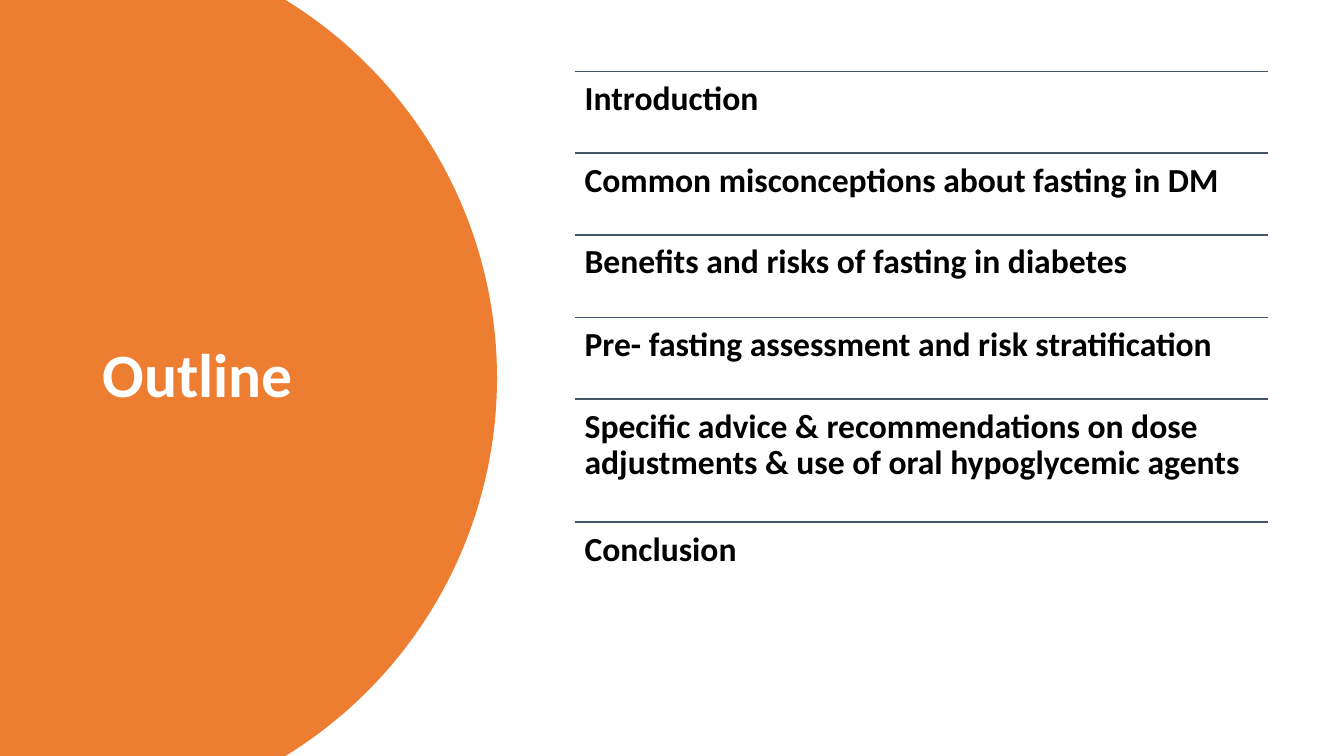
import math

from pptx import Presentation
from pptx.dml.color import RGBColor
from pptx.enum.shapes import MSO_CONNECTOR
from pptx.enum.text import MSO_ANCHOR
from pptx.oxml.ns import qn
from pptx.util import Pt
from lxml import etree

PX = 9144  # EMU in one px, 100 px to the inch
WIDTH, HEIGHT = 1333, 750
ORANGE = RGBColor(0xED, 0x7D, 0x31)
SLATE = RGBColor(0x44, 0x54, 0x6A)
BLACK = RGBColor(0, 0, 0)
WHITE = RGBColor(0xFF, 0xFF, 0xFF)
STRAIGHT = MSO_CONNECTOR.STRAIGHT
TOP, MIDDLE = MSO_ANCHOR.TOP, MSO_ANCHOR.MIDDLE

LIST_LEFT, LIST_TOP, LIST_WIDTH = 570, 71, 688
TOPICS = [  # text and row height
    ("Introduction", 81),
    ("Common misconceptions about fasting in DM", 81),
    ("Benefits and risks of fasting in diabetes", 82),
    ("Pre- fasting assessment and risk stratification", 81),
    ("Specific advice & recommendations on dose adjustments "
     "& use of oral hypoglycemic agents", 122),
    ("Conclusion", 76),
]


class Deck:
    """Holds the style and the current slide; lengths are px."""
    font = "Calibri"

    def __init__(self):
        self.prs = Presentation()
        self.prs.slide_width = WIDTH * PX
        self.prs.slide_height = HEIGHT * PX
        self.s = self.prs.slides.add_slide(self.prs.slide_layouts[6])

    def round_panel(self, center_x, radius, color, steps=90):
        """Fill from the left edge to a circle arc as tall as the slide."""
        half = math.asin(HEIGHT / 2 / radius)
        angles = [half * (2 * i / steps - 1) for i in range(steps + 1)]
        arc = [((center_x + radius * math.cos(a)) * PX,
                (HEIGHT / 2 + radius * math.sin(a)) * PX) for a in angles]
        builder = self.s.shapes.build_freeform(0, 0)
        builder.add_line_segments(arc + [(0, HEIGHT * PX)], close=True)
        sp = builder.convert_to_shape()
        sp.shadow.inherit = False
        sp.fill.solid()
        sp.fill.fore_color.rgb = color
        sp.line.fill.background()

    def rule(self, x, y, width, color):
        line = self.s.shapes.add_connector(
            STRAIGHT, x * PX, y * PX, (x + width) * PX, y * PX)
        line.line.color.rgb = color
        line.line.width = Pt(1)
        etree.SubElement(line._element.spPr, qn("a:effectLst"))

    def text(self, x, y, width, height, words, size, color, anchor=TOP, inset=10):
        sp = self.s.shapes.add_textbox(x * PX, y * PX, width * PX, height * PX)
        tf = sp.text_frame
        tf.word_wrap = True
        tf.vertical_anchor = anchor
        tf.margin_left = tf.margin_right = inset * PX
        tf.margin_top = tf.margin_bottom = inset * PX
        p = tf.paragraphs[0]
        p.line_spacing = 0.9
        r = p.add_run()
        r.text = words
        r.font.name = self.font
        r.font.size = Pt(size)
        r.font.bold = True
        r.font.color.rgb = color


def main():
    deck = Deck()
    deck.round_panel(53, 440, ORANGE)
    deck.text(92, 70, 323, 609, "Outline", 44, WHITE, MIDDLE)
    y = LIST_TOP
    for topic, height in TOPICS:
        deck.rule(LIST_LEFT, y, LIST_WIDTH, SLATE)
        deck.text(LIST_LEFT, y, LIST_WIDTH, height, topic, 24, BLACK)
        y += height
    deck.prs.save("out.pptx")


if __name__ == "__main__":
    main()
